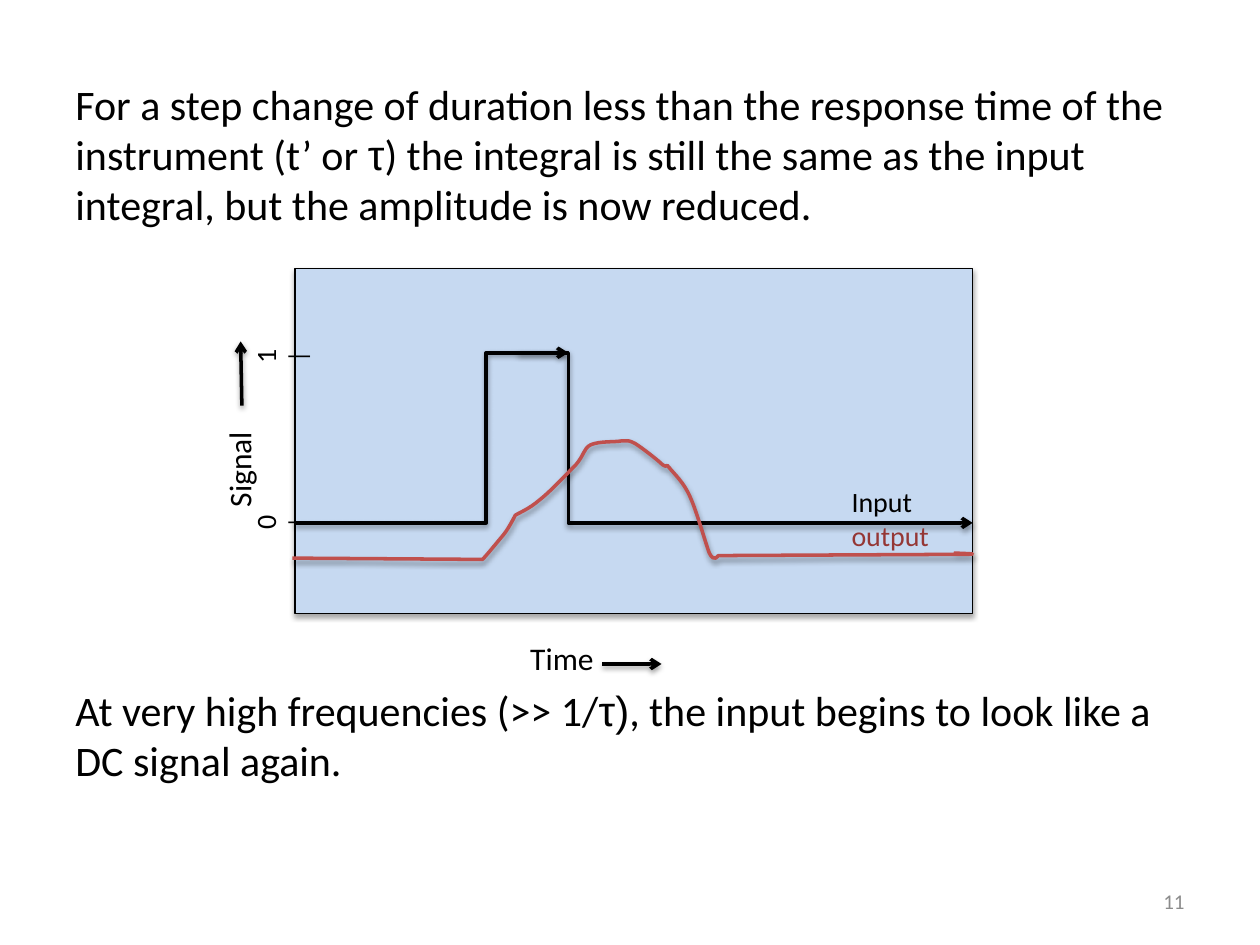
from lxml import etree
from pptx import Presentation
from pptx.dml.color import RGBColor
from pptx.enum.shapes import MSO_CONNECTOR, MSO_SHAPE
from pptx.enum.text import MSO_ANCHOR, PP_ALIGN
from pptx.oxml import parse_xml
from pptx.oxml.ns import nsdecls, qn
from pptx.util import Inches, Pt

STRAIGHT, ELBOW = MSO_CONNECTOR.STRAIGHT, MSO_CONNECTOR.ELBOW
LEFT, CENTER, RIGHT = PP_ALIGN.LEFT, PP_ALIGN.CENTER, PP_ALIGN.RIGHT
TOP, MIDDLE = MSO_ANCHOR.TOP, MSO_ANCHOR.MIDDLE

BLACK = RGBColor(0x00, 0x00, 0x00)
GRAY = RGBColor(0x8C, 0x8C, 0x8C)
PLOT_BLUE = RGBColor(0xC6, 0xD9, 0xF1)
OUTPUT_RED = RGBColor(0xC0, 0x50, 0x4D)
OUTPUT_TEXT_RED = RGBColor(0x95, 0x37, 0x35)

PLOT_LEFT, PLOT_TOP, PLOT_WIDTH, PLOT_HEIGHT = 2.34, 2.13, 5.38, 2.74
PLOT_RIGHT = PLOT_LEFT + PLOT_WIDTH
ZERO_Y, ONE_Y = 4.15, 2.8
STEP_START, STEP_END = 3.86, 4.51

OUTPUT_START = (2.32, 4.43)
# One point is a straight segment, three points are a cubic curve.
OUTPUT_SEGMENTS = [
    [(3.83, 4.44)],
    [(3.86, 4.41), (3.95, 4.3), (4, 4.24)],
    [(4.04, 4.19), (4.09, 4.09), (4.09, 4.09)],
    [(4.12, 4.07), (4.2, 4.04), (4.28, 3.97)],
    [(4.36, 3.91), (4.5, 3.76), (4.57, 3.69)],
    [(4.64, 3.61), (4.63, 3.56), (4.69, 3.53)],
    [(4.76, 3.5), (4.88, 3.51), (4.93, 3.5)],
    [(4.99, 3.5), (4.98, 3.49), (5.04, 3.52)],
    [(5.09, 3.55), (5.22, 3.65), (5.26, 3.69)],
    [(5.31, 3.72), (5.28, 3.67), (5.31, 3.71)],
    [(5.35, 3.76), (5.43, 3.83), (5.48, 3.95)],
    [(5.53, 4.06), (5.6, 4.31), (5.63, 4.39)],
    [(5.67, 4.47), (5.7, 4.41), (5.7, 4.41)],
    [(7.58, 4.4)],
    [(7.9, 4.4), (7.57, 4.39), (7.57, 4.39)],
]


def add_text(slide, box, lines, sizes, align=LEFT, anchor=TOP, rotation=0, wrap=True):
    """Add a text box; each line is a list of (text, font, color) runs with one size."""
    shape = slide.shapes.add_textbox(*map(Inches, box))
    shape.rotation = rotation
    frame = shape.text_frame
    frame.word_wrap = wrap
    frame.vertical_anchor = anchor
    for index, (runs, size) in enumerate(zip(lines, sizes)):
        paragraph = frame.add_paragraph() if index else frame.paragraphs[0]
        paragraph.alignment = align
        paragraph.font.size = Pt(size)
        for text, font, color in runs:
            run = paragraph.add_run()
            run.text = text
            run.font.name = font
            run.font.color.rgb = color


def add_label(slide, box, text, size, color=BLACK, **options):
    add_text(slide, box, [[(text, "Calibri", color)]], [size], **options)


def add_statement(slide, top, height, before, symbol, after):
    """Add a full-width statement whose Greek symbol is set in Arial."""
    runs = [(before, "Calibri", BLACK), (symbol, "Arial", BLACK), (after, "Calibri", BLACK)]
    add_text(slide, (0.5, top, 9, height), [runs], [24])


def add_axis_value(slide, text, y):
    """Add a sideways axis value with its tick mark below the digit."""
    lines = [[(text, "Calibri", BLACK)], [("|", "Calibri", BLACK)]]
    add_text(slide, (2.02, y - 0.3, 0.4, 0.6), lines, [16, 14], align=CENTER, rotation=270)


def add_shadow(shape, opacity=38, distance=1.6):
    shape._element.spPr.append(parse_xml(
        f'<a:effectLst {nsdecls("a")}><a:outerShdw blurRad="{Pt(3.1)}" dist="{Pt(distance)}" '
        f'dir="5400000" rotWithShape="0"><a:srgbClr val="{BLACK}">'
        f'<a:alpha val="{opacity * 1000}"/></a:srgbClr></a:outerShdw></a:effectLst>'))


def add_arrow(slide, start, end, bend_x=None):
    """Add a shadowed arrow, stepping vertically at bend_x if it is given."""
    kind = STRAIGHT if bend_x is None else ELBOW
    arrow = slide.shapes.add_connector(kind, *map(Inches, (*start, *end)))
    arrow.line.color.rgb = BLACK
    arrow.line.width = Pt(2)
    if bend_x is not None:
        bend = round((bend_x - start[0]) / (end[0] - start[0]) * 100000)
        guides = arrow._element.spPr.find(qn("a:prstGeom")).get_or_add_avLst()
        etree.SubElement(guides, qn("a:gd"), name="adj1", fmla=f"val {bend}")
    etree.SubElement(arrow.line._get_or_add_ln(), qn("a:tailEnd"), type="arrow")
    add_shadow(arrow)


def add_plot_area(slide):
    box = PLOT_LEFT, PLOT_TOP, PLOT_WIDTH, PLOT_HEIGHT
    plot = slide.shapes.add_shape(MSO_SHAPE.RECTANGLE, *map(Inches, box))
    plot.fill.solid()
    plot.fill.fore_color.rgb = PLOT_BLUE
    plot.line.color.rgb = BLACK
    plot.line.width = Pt(0.75)
    add_shadow(plot, 35, 1.8)


def bend_segments(curve, segments):
    """Turn the straight segments that have control points into cubic curves."""
    lines = list(curve._element.spPr.iter(qn("a:lnTo")))
    for line, segment in zip(lines, segments):
        if len(segment) == 3:
            cubic = etree.Element(qn("a:cubicBezTo"))
            for x, y in segment:
                etree.SubElement(cubic, qn("a:pt"), x=str(Inches(x) - curve.left),
                                 y=str(Inches(y) - curve.top))
            line.getparent().replace(line, cubic)


def add_output_curve(slide):
    builder = slide.shapes.build_freeform(*map(Inches, OUTPUT_START))
    ends = [tuple(map(Inches, segment[-1])) for segment in OUTPUT_SEGMENTS]
    builder.add_line_segments(ends, close=False)
    curve = builder.convert_to_shape()
    bend_segments(curve, OUTPUT_SEGMENTS)
    curve.fill.background()
    curve.line.color.rgb = OUTPUT_RED
    curve.line.width = Pt(2)
    add_shadow(curve)


def main():
    presentation = Presentation()
    presentation.slide_width, presentation.slide_height = Inches(10), Inches(7.5)
    slide = presentation.slides.add_slide(presentation.slide_layouts[6])

    add_statement(slide, 0.57, 1.32,
                  "For a step change of duration less than the response time of the instrument (t’ or ",
                  "τ", ") the integral is still the same as the input integral, "
                  "but the amplitude is now reduced.")
    add_statement(slide, 5.38, 0.92, "At very high frequencies (>> 1/", "τ)",
                  ", the input begins to look like a DC signal again.")
    add_label(slide, (7.17, 6.95, 2.33, 0.4), "11", 12, GRAY, align=RIGHT, anchor=MIDDLE)

    add_plot_area(slide)
    add_label(slide, (1.24, 3.26, 1.32, 0.41), "Signal", 18, rotation=270)
    add_arrow(slide, (1.92, 3.22), (1.91, 2.71))
    add_label(slide, (4.11, 5.02, 0.72, 0.46), "Time", 18, wrap=False)
    add_arrow(slide, (4.78, 5.27), (5.25, 5.27))

    add_arrow(slide, (PLOT_LEFT, ZERO_Y), (STEP_END, ONE_Y), STEP_START)
    add_arrow(slide, (4.11, ONE_Y), (PLOT_RIGHT, ZERO_Y), STEP_END)
    add_text(slide, (6.66, 3.8, 1.01, 0.64),
             [[("Input", "Calibri", BLACK)], [("output", "Calibri", OUTPUT_TEXT_RED)]], [16, 16])
    add_axis_value(slide, "0", ZERO_Y)
    add_axis_value(slide, "1", 2.83)
    add_output_curve(slide)

    presentation.save("out.pptx")


if __name__ == "__main__":
    main()
